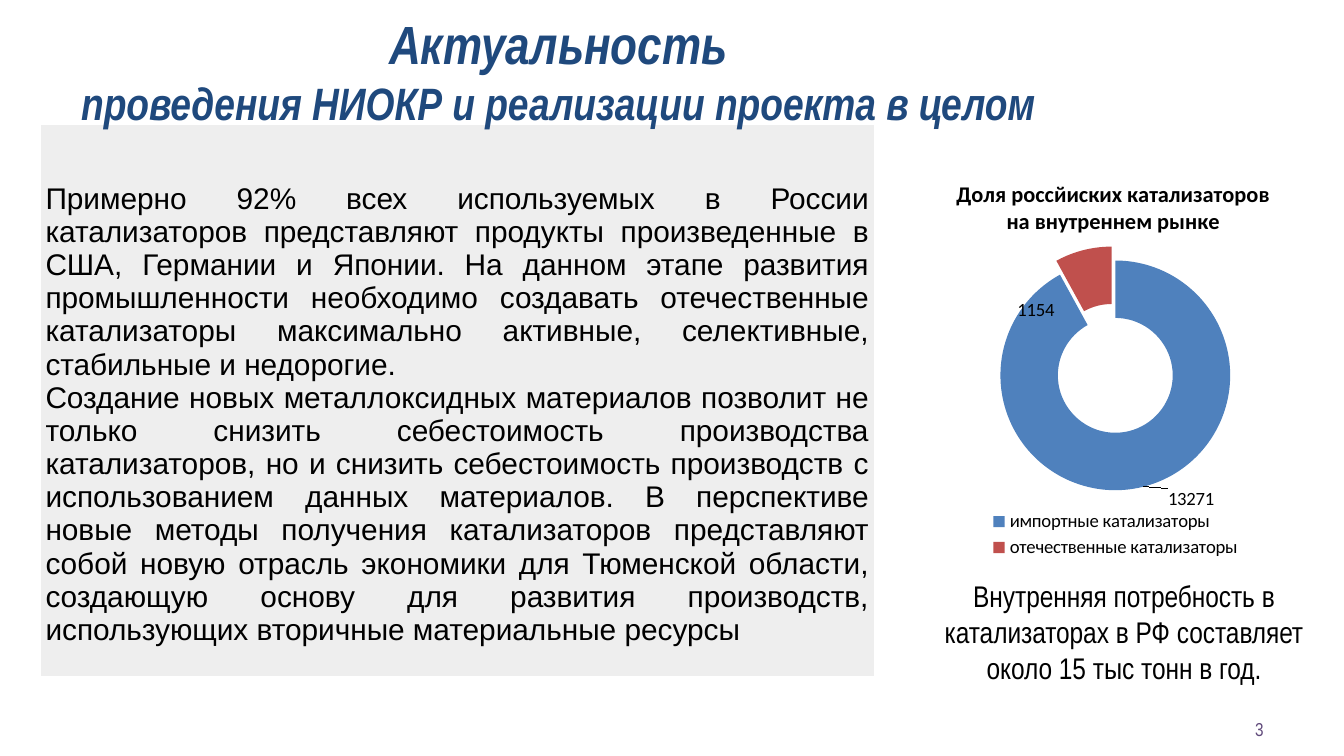
from dataclasses import dataclass
from typing import Any

from lxml import etree
from pptx import Presentation
from pptx.chart.data import CategoryChartData
from pptx.dml.color import RGBColor
from pptx.enum.chart import XL_CHART_TYPE, XL_LEGEND_POSITION
from pptx.enum.text import MSO_ANCHOR, PP_ALIGN
from pptx.oxml import parse_xml
from pptx.oxml.ns import nsdecls, qn
from pptx.util import Cm, Pt

BLACK = RGBColor(0x00, 0x00, 0x00)
NAVY = RGBColor(0x1F, 0x49, 0x7D)
PURPLE = RGBColor(0x60, 0x4A, 0x7B)
PANEL_GREY = RGBColor(0xEE, 0xEE, 0xEE)
IMPORT_BLUE = RGBColor(0x4F, 0x81, 0xBD)
DOMESTIC_RED = RGBColor(0xC0, 0x50, 0x4D)

CENTER, RIGHT, JUSTIFY = PP_ALIGN.CENTER, PP_ALIGN.RIGHT, PP_ALIGN.JUSTIFY
TOP, MIDDLE = MSO_ANCHOR.TOP, MSO_ANCHOR.MIDDLE
DOUGHNUT = XL_CHART_TYPE.DOUGHNUT
LEGEND_BOTTOM = XL_LEGEND_POSITION.BOTTOM

NARROW = "Arial Narrow"


@dataclass(frozen=True)
class Line:
    text: str
    size: float
    color: RGBColor = BLACK
    font: str = NARROW
    emphasis: bool = False


@dataclass(frozen=True)
class TextBlock:
    left: float
    top: float
    width: float
    height: float
    lines: tuple[Line, ...]
    align: Any = CENTER
    anchor: Any = TOP


@dataclass(frozen=True)
class Share:
    name: str
    tonnes: int
    color: RGBColor
    label_shift: tuple[float, float]
    explosion: int


PANEL_LINES = tuple(
    Line(text, 16, font="Arial")
    for text in (
        "Примерно 92% всех используемых в России катализаторов представляют "
        "продукты произведенные в США, Германии и Японии. На данном этапе "
        "развития промышленности необходимо создавать отечественные "
        "катализаторы максимально активные, селективные, стабильные и "
        "недорогие.",
        "Создание новых металлоксидных материалов позволит не только снизить "
        "себестоимость производства катализаторов, но и снизить себестоимость "
        "производств с использованием данных материалов. В перспективе новые "
        "методы получения катализаторов представляют собой новую отрасль "
        "экономики для Тюменской области, создающую основу для развития "
        "производств, использующих вторичные материальные ресурсы",
    )
)

TEXT_BLOCKS = (
    TextBlock(0, 0.08, 21.11, 2.26, (
        Line("Актуальность", 28.8, NAVY, emphasis=True),
        Line("проведения НИОКР и реализации проекта в целом", 24.3, NAVY,
             emphasis=True),
    )),
    TextBlock(17.09, 10.8, 8.31, 2.31, (
        Line("Внутренняя потребность в катализаторах в РФ составляет "
             "около 15 тыс тонн в год.", 16),
    )),
    TextBlock(18.21, 13.41, 5.92, 0.76, (Line("3", 10, PURPLE),), RIGHT, MIDDLE),
)

SHARES = (
    Share("импортные катализаторы", 13271, IMPORT_BLUE, (0.13, 0.1), 0),
    Share("отечественные катализаторы", 1154, DOMESTIC_RED, (-0.13, 0.08), 25),
)


def apply_format(target: Any, values: dict[str, Any]) -> None:
    for name, value in values.items():
        setattr(target, name, value)


def write_lines(text_frame: Any, lines: tuple[Line, ...], align: Any) -> None:
    for index, line in enumerate(lines):
        paragraph = (text_frame.add_paragraph() if index
                     else text_frame.paragraphs[0])
        paragraph.alignment = align
        run = paragraph.add_run()
        run.text = line.text
        apply_format(run.font, {"name": line.font, "size": Pt(line.size),
                                "bold": line.emphasis, "italic": line.emphasis})
        run.font.color.rgb = line.color


def add_text_block(slide: Any, block: TextBlock) -> None:
    box = slide.shapes.add_textbox(Cm(block.left), Cm(block.top),
                                   Cm(block.width), Cm(block.height))
    apply_format(box.text_frame, {"word_wrap": True,
                                  "vertical_anchor": block.anchor})
    write_lines(box.text_frame, block.lines, block.align)


def add_panel(slide: Any) -> None:
    table = slide.shapes.add_table(1, 1, Cm(0.76), Cm(2.34),
                                   Cm(15.77), Cm(10.46)).table
    apply_format(table, {"first_row": False, "horz_banding": False})
    cell = table.cell(0, 0)
    apply_format(cell, {"margin_left": Cm(0.1), "margin_right": Cm(0.1),
                        "margin_top": Cm(0.63), "margin_bottom": Cm(0.1),
                        "vertical_anchor": MIDDLE})
    cell.fill.solid()
    cell.fill.fore_color.rgb = PANEL_GREY
    write_lines(cell.text_frame, PANEL_LINES, JUSTIFY)


def layout_xml(values: dict[str, Any]) -> Any:
    """Return a manual chart layout with the given settings."""
    settings = "".join(f'<c:{name} val="{value}"/>'
                       for name, value in values.items())
    return parse_xml(f'<c:layout {nsdecls("c")}><c:manualLayout>{settings}'
                     "</c:manualLayout></c:layout>")


def place(parent: Any, position: int, values: dict[str, Any]) -> None:
    """Replace the automatic layout of a chart part by a manual one."""
    for layout in parent.findall(qn("c:layout")):
        parent.remove(layout)
    parent.insert(position, layout_xml(values))


def format_share(series: Any, index: int, share: Share) -> None:
    point = series.points[index]
    point.format.fill.solid()
    point.format.fill.fore_color.rgb = share.color
    point_xml = series._element.findall(qn("c:dPt"))[index]
    explosion = etree.Element(qn("c:explosion"), val=str(share.explosion))
    point_xml.find(qn("c:spPr")).addprevious(explosion)

    shift_x, shift_y = share.label_shift
    label = parse_xml(
        f'<c:dLbl {nsdecls("c")}><c:idx val="{index}"/>'
        '<c:showLegendKey val="0"/><c:showVal val="1"/><c:showCatName val="0"/>'
        '<c:showSerName val="0"/><c:showPercent val="0"/>'
        '<c:showBubbleSize val="0"/></c:dLbl>')
    place(label, 1, {"x": shift_x, "y": shift_y})
    series.data_labels._element.insert(index, label)


def add_share_chart(slide: Any) -> None:
    data = CategoryChartData()
    data.categories = [share.name for share in SHARES]
    data.add_series("Series 1", [share.tonnes for share in SHARES])
    chart = slide.shapes.add_chart(DOUGHNUT, Cm(17.09), Cm(3.02), Cm(7.9),
                                   Cm(7.62), data).chart
    apply_format(chart.font, {"name": "Calibri", "size": Pt(10)})
    chart.font.color.rgb = BLACK
    write_lines(chart.chart_title.text_frame, (
        Line("Доля россйиских катализаторов на внутреннем рынке", 12,
             font="Calibri"),), CENTER)
    chart.chart_title.text_frame.paragraphs[0].runs[0].font.bold = True

    plot = chart.plots[0]
    plot.vary_by_categories = True
    series = plot.series[0]
    apply_format(series.data_labels, {"show_value": True,
                                      "show_percentage": False})
    for leader in series.data_labels._element.findall(qn("c:showLeaderLines")):
        leader.set("val", "1")
    for index, share in enumerate(SHARES):
        format_share(series, index, share)
    plot._element.find(qn("c:holeSize")).set("val", "50")
    place(plot._element.getparent(), 0, {
        "layoutTarget": "inner", "xMode": "edge", "yMode": "edge",
        "x": 0.23, "y": 0.25, "w": 0.55, "h": 0.57})

    chart.has_legend = True
    apply_format(chart.legend, {"position": LEGEND_BOTTOM,
                                "include_in_layout": False})
    place(chart.legend._element, 1, {"xMode": "edge", "yMode": "edge",
                                     "x": 0.19, "y": 0.86, "w": 0.63, "h": 0.14})


def main() -> None:
    presentation = Presentation()
    apply_format(presentation, {"slide_width": Cm(25.4),
                                "slide_height": Cm(14.29)})
    slide = presentation.slides.add_slide(presentation.slide_layouts[6])
    add_panel(slide)
    add_share_chart(slide)
    for block in TEXT_BLOCKS:
        add_text_block(slide, block)
    presentation.save("out.pptx")


if __name__ == "__main__":
    main()
